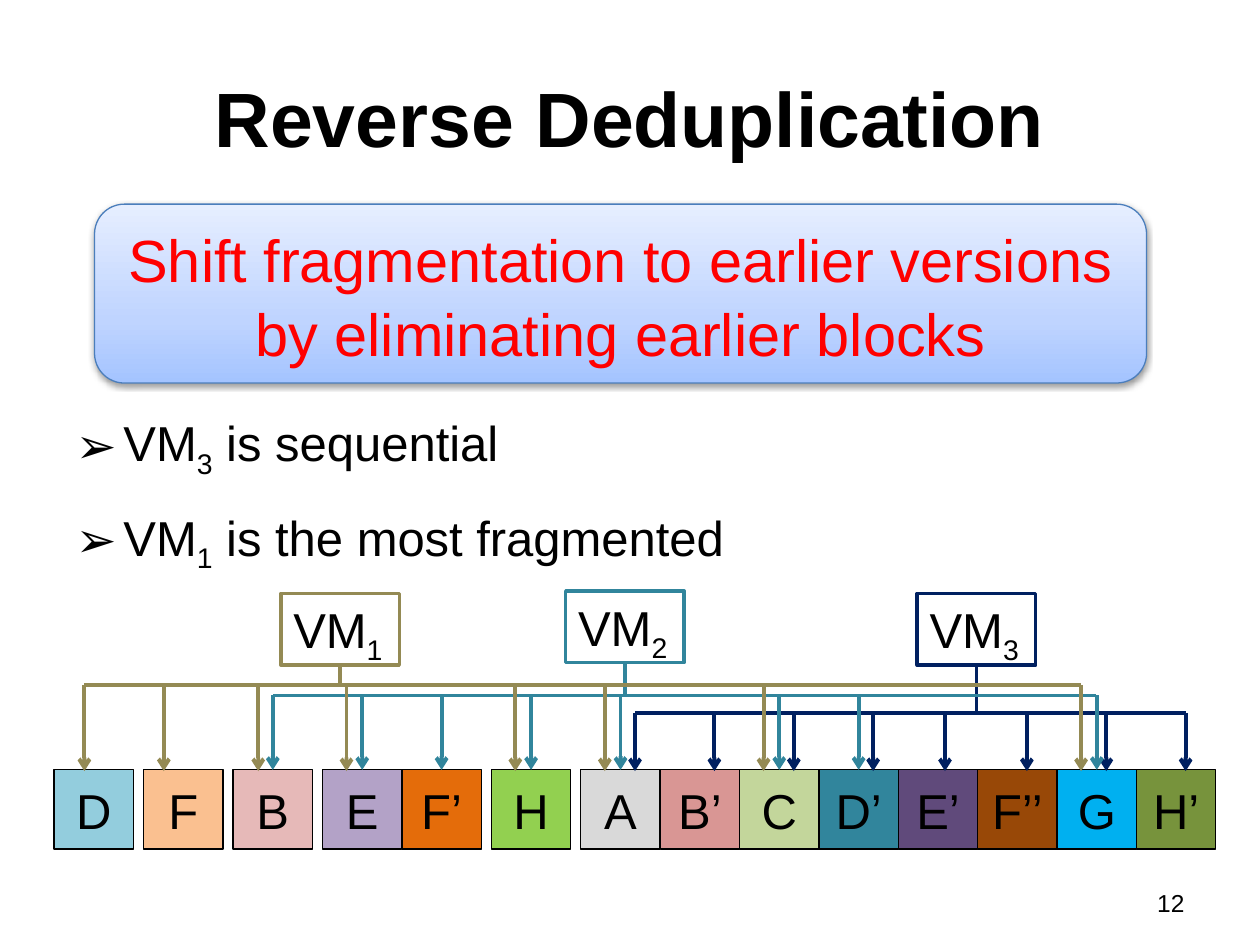
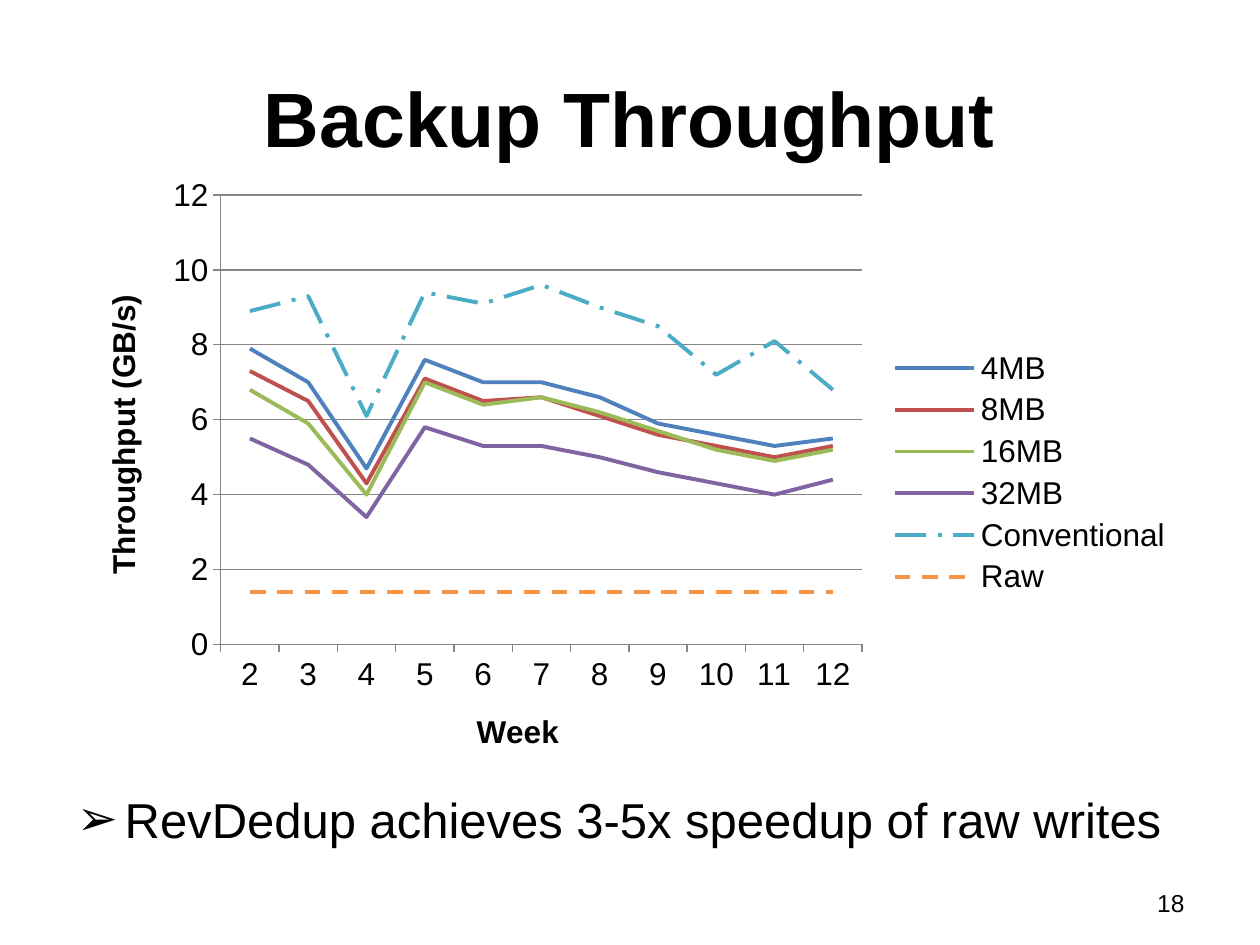
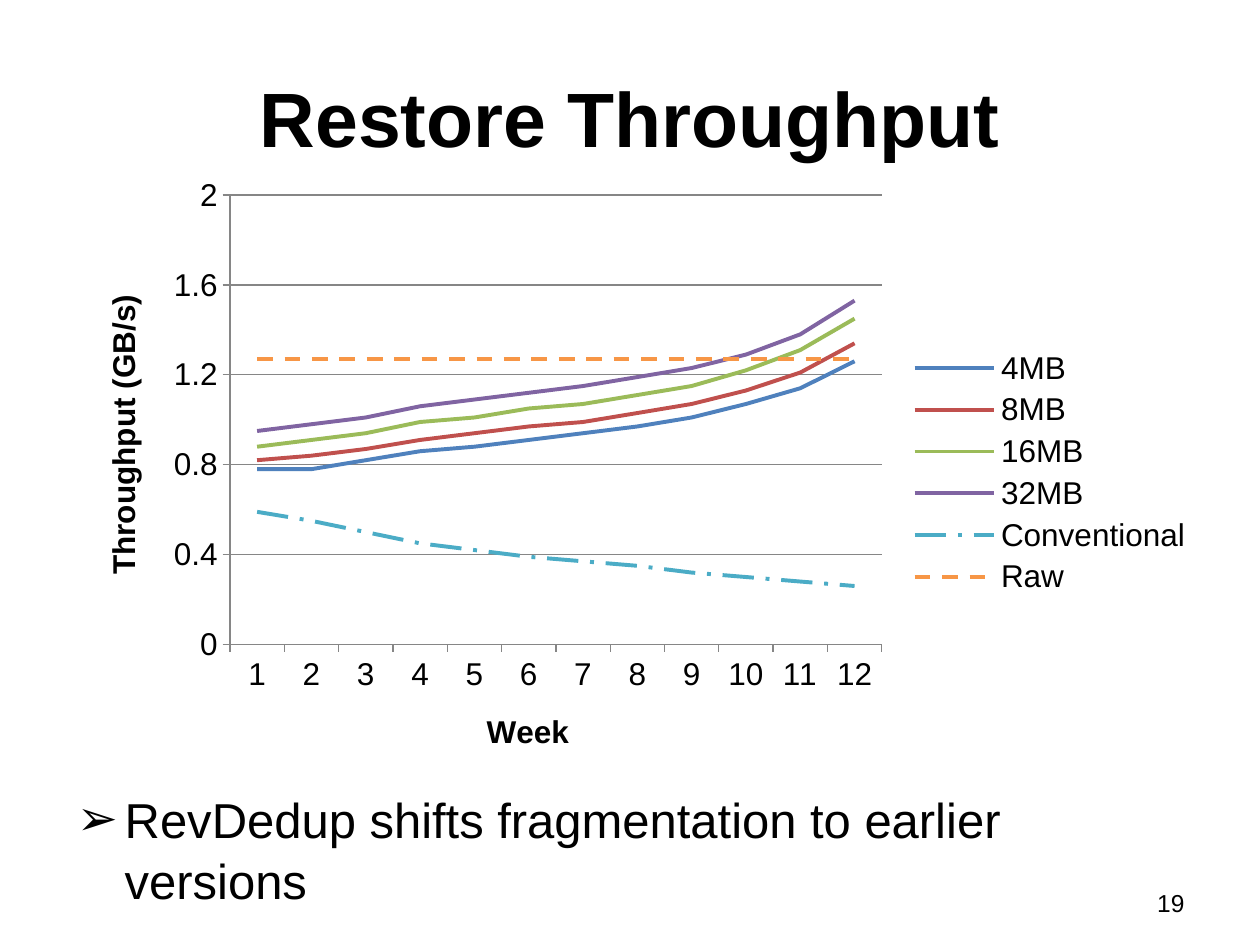
from copy import deepcopy
from dataclasses import dataclass

from lxml import etree
from pptx import Presentation, util as u
from pptx.chart.data import CategoryChartData
from pptx.dml.color import RGBColor
from pptx.enum import chart as ch, dml, shapes, text
from pptx.oxml.ns import qn

Inches, Pt = u.Inches, u.Pt
ALIGN, ANCHOR = text.PP_ALIGN, text.MSO_ANCHOR
SHAPE = shapes.MSO_SHAPE
DASH = dml.MSO_LINE


@dataclass(frozen=True)
class Theme:
    font: str = "Arial"
    ink: str = "000000"
    paper: str = "FFFFFF"
    alert: str = "FF0000"
    edge: str = "4B7EBC"
    axis: str = "868686"
    grad: tuple = ((0, "A4C4FF"), (0.35, "BFD4FF"), (1, "E6EEFF"))
    title: int = 44
    banner: int = 34
    body: int = 28
    chart: int = 18
    page: int = 14
    lead: float = 1.05


T = Theme()

# Block groups: (label, fill); blocks in one group touch
GROUPS = [
    [("D", "93CDDD")],
    [("F", "FAC090")],
    [("B", "E6B9B8")],
    [("E", "B3A2C7"), ("F’", "E46C0A")],
    [("H", "92D050")],
    [("A", "D9D9D9"), ("B’", "D99694"), ("C", "C3D69B"), ("D’", "31859C"),
     ("E’", "604A7B"), ("F’’", "984807"), ("G", "00B0F0"), ("H’", "77933C")],
]

# Machines: label, colour, box left and top, bar height, arrow positions
VMS = [
    ("VM_3", "002060", 7.28, 4.71, 5.66,
     [5.04, 5.67, 6.3, 6.93, 7.5, 8.15, 8.78, 9.41]),
    ("VM_2", "31859C", 4.49, 4.69, 5.52,
     [2.17, 2.88, 3.5, 4.23, 4.94, 6.18, 6.84, 8.7]),
    ("VM_1", "948A54", 2.23, 4.71, 5.44,
     [0.67, 1.3, 2.05, 2.75, 4.09, 4.8, 6.06, 8.58]),
]

# Series styles: name, colour, dash
LINES = [
    ("4MB", "4F81BD", None),
    ("8MB", "C0504D", None),
    ("16MB", "9BBB59", None),
    ("32MB", "8064A2", None),
    ("Conventional", "4BACC6", DASH.LONG_DASH_DOT),
    ("Raw", "F79646", DASH.DASH),
]

BACKUP = [
    [7.9, 7, 4.7, 7.6, 7, 7, 6.6, 5.9, 5.6, 5.3, 5.5],
    [7.3, 6.5, 4.3, 7.1, 6.5, 6.6, 6.1, 5.6, 5.3, 5, 5.3],
    [6.8, 5.9, 4, 7, 6.4, 6.6, 6.2, 5.7, 5.2, 4.9, 5.2],
    [5.5, 4.8, 3.4, 5.8, 5.3, 5.3, 5, 4.6, 4.3, 4, 4.4],
    [8.9, 9.3, 6.1, 9.4, 9.1, 9.6, 9, 8.5, 7.2, 8.1, 6.8],
    [1.4] * 11,
]
RESTORE = [
    [0.78, 0.78, 0.82, 0.86, 0.88, 0.91, 0.94, 0.97, 1.01, 1.07, 1.14, 1.26],
    [0.82, 0.84, 0.87, 0.91, 0.94, 0.97, 0.99, 1.03, 1.07, 1.13, 1.21, 1.34],
    [0.88, 0.91, 0.94, 0.99, 1.01, 1.05, 1.07, 1.11, 1.15, 1.22, 1.31, 1.45],
    [0.95, 0.98, 1.01, 1.06, 1.09, 1.12, 1.15, 1.19, 1.23, 1.29, 1.38, 1.53],
    [0.59, 0.55, 0.5, 0.45, 0.42, 0.39, 0.37, 0.35, 0.32, 0.3, 0.28, 0.26],
    [1.27] * 12,
]


# Helpers
def rgb(code):
    return RGBColor.from_string(code)


def style(font, size, color=T.ink, bold=False):
    font.name, font.size, font.bold = T.font, Pt(size), bold
    font.color.rgb = rgb(color)


def write(frame, *paras, size=T.body, color=T.ink, bold=False, wrap=True,
          align=ALIGN.LEFT, anchor=ANCHOR.TOP, lead=None, gap=None, bullet=None):
    """Fill a frame; an underscore lowers the character after it."""
    frame.auto_size = text.MSO_AUTO_SIZE.NONE
    frame.word_wrap, frame.vertical_anchor = wrap, anchor
    for i, line in enumerate(paras):
        para = frame.add_paragraph() if i else frame.paragraphs[0]
        para.alignment, para.line_spacing = align, lead
        if gap is not None:
            para.space_before = Pt(gap)
        if bullet:
            mark(para, bullet)
        head, *rest = line.split("_")
        parts = [(head, False)]
        for part in rest:
            parts += [(part[0], True), (part[1:], False)]
        for words, low in parts:
            if words:
                run = para.add_run()
                run.text = words
                style(run.font, size, color, bold)
                if low:
                    run._r.get_or_add_rPr().set("baseline", "-25000")


def mark(para, sign):
    props = para._p.get_or_add_pPr()
    props.set("marL", str(Inches(0.38)))
    props.set("indent", str(-Inches(0.38)))
    etree.SubElement(props, qn("a:buChar")).set("char", sign)


def place(shape, box):
    shape.left, shape.top, shape.width, shape.height = map(Inches, box)


def draw(slide, kind, box, fill, line, width):
    shape = slide.shapes.add_shape(kind, *map(Inches, box))
    shape.shadow.inherit = False
    if fill:
        shape.fill.solid()
        shape.fill.fore_color.rgb = rgb(fill)
    shape.line.color.rgb = rgb(line)
    shape.line.width = Pt(width)
    return shape


def link(slide, start, end, color, arrow=False):
    line = slide.shapes.add_connector(
        shapes.MSO_CONNECTOR.STRAIGHT, *map(Inches, (*start, *end)))
    line.line.color.rgb = rgb(color)
    line.line.width = Pt(2.25)
    if arrow:
        etree.SubElement(line.line._get_or_add_ln(),
                         qn("a:tailEnd")).set("type", "arrow")
    etree.SubElement(line._element.spPr, qn("a:effectLst"))
    return line


# Shared frame: title, bullet list, page number
def page(deck, title, points, box, number):
    slide = deck.slides.add_slide(deck.slide_layouts[1])
    head, body = slide.placeholders
    place(head, (0.5, 0.3, 9, 1.25))
    write(head.text_frame, title, size=T.title, bold=True,
          align=ALIGN.CENTER, anchor=ANCHOR.MIDDLE)
    place(body, box)
    write(body.text_frame, *points, lead=T.lead, gap=14, bullet="➢")
    foot = slide.shapes.add_textbox(*map(Inches, (7.17, 7, 2.33, 0.35)))
    write(foot.text_frame, str(number), size=T.page, align=ALIGN.RIGHT)
    return slide


# Gradient banner with soft shadow
def banner(slide, box, words):
    shape = draw(slide, SHAPE.ROUNDED_RECTANGLE, box, None, T.edge, 0.75)
    shape.fill.gradient()
    shape.fill.gradient_angle = 90
    first = shape._element.spPr.find(".//" + qn("a:gs"))
    first.addnext(deepcopy(first))
    for stop, (pos, color) in zip(shape.fill.gradient_stops, T.grad):
        stop.position, stop.color.rgb = pos, rgb(color)
    glow = etree.SubElement(shape._element.spPr.find(qn("a:effectLst")),
                            qn("a:outerShdw"), blurRad=str(Pt(3.1)),
                            dist=str(Pt(1.6)), dir="5400000", rotWithShape="0")
    tint = etree.SubElement(glow, qn("a:srgbClr"), val=T.ink)
    etree.SubElement(tint, qn("a:alpha"), val="38000")
    write(shape.text_frame, words, size=T.banner, color=T.alert,
          align=ALIGN.CENTER, lead=T.lead)


# Row of blocks; returns (centre, shape) pairs
def row(slide, left, top, side=0.63, gap=0.08):
    blocks = []
    for group in GROUPS:
        for label, fill in group:
            block = draw(slide, SHAPE.RECTANGLE, (left, top, side, side),
                         fill, T.ink, 0.75)
            write(block.text_frame, label, wrap=False,
                  align=ALIGN.CENTER, anchor=ANCHOR.MIDDLE)
            blocks.append((left + side / 2, block))
            left += side
        left += gap
    return blocks


# One machine: arrows, bar, box and stem
def tree(slide, blocks, label, color, left, top, bar, spots, floor=6.12):
    for x in spots:
        mid, block = min(blocks, key=lambda b: abs(b[0] - x))
        centred = abs(mid - x) < 0.04
        x = mid if centred else x
        arrow = link(slide, (x, bar), (x, floor), color, arrow=True)
        if centred:
            arrow.end_connect(block, 0)
    link(slide, (spots[0], bar), (spots[-1], bar), color)
    wide, high = 0.94, 0.57
    node = draw(slide, SHAPE.RECTANGLE, (left, top, wide, high),
                T.paper, color, 2)
    write(node.text_frame, label, wrap=False)
    mid = left + wide / 2
    link(slide, (mid, top + high), (mid, bar), color).begin_connect(node, 2)


# Line chart
def graph(slide, box, weeks, table, top=None, step=None):
    data = CategoryChartData()
    data.categories = [str(week) for week in weeks]
    for (name, _, _), vals in zip(LINES, table):
        data.add_series(name, vals)
    chart = slide.shapes.add_chart(
        ch.XL_CHART_TYPE.LINE, *map(Inches, box), data).chart
    chart.has_title = False
    style(chart.font, T.chart)
    chart.has_legend = True
    chart.legend.position = ch.XL_LEGEND_POSITION.RIGHT
    chart.legend.include_in_layout = False
    style(chart.legend.font, T.chart)

    cat, val = chart.category_axis, chart.value_axis
    val.has_major_gridlines = True
    if top:
        val.minimum_scale, val.maximum_scale, val.major_unit = 0, top, step
    for axis, words in ((cat, "Week"), (val, "Throughput (GB/s)")):
        axis.major_tick_mark = ch.XL_TICK_MARK.OUTSIDE
        axis.minor_tick_mark = ch.XL_TICK_MARK.NONE
        style(axis.tick_labels.font, T.chart)
        run = axis.axis_title.text_frame.paragraphs[0].add_run()
        run.text = words
        style(run.font, T.chart, bold=True)
    for rule in (cat.format, val.format, val.major_gridlines.format):
        rule.line.color.rgb = rgb(T.axis)
        rule.line.width = Pt(0.75)

    plot = chart.plots[0]
    plot.vary_by_categories = False
    for item, (_, color, dash) in zip(plot.series, LINES):
        item.smooth = False
        item.marker.style = ch.XL_MARKER_STYLE.NONE
        line = item.format.line
        line.color.rgb, line.width = rgb(color), Pt(2.25)
        if dash:
            line.dash_style = dash


# Slides
def main():
    deck = Presentation()
    deck.slide_width, deck.slide_height = Inches(10), Inches(7.5)

    slide = page(deck, "Reverse Deduplication",
                 ["VM_3 is sequential", "VM_1 is the most fragmented"],
                 (0.5, 3.2, 9, 1.02), 12)
    banner(slide, (0.75, 1.62, 8.35, 1.42),
           "Shift fragmentation to earlier versions by eliminating earlier blocks")
    blocks = row(slide, 0.43, 6.11)
    for machine in VMS:
        tree(slide, blocks, *machine)

    slide = page(deck, "Backup Throughput",
                 ["RevDedup achieves 3-5x speedup of raw writes"],
                 (0.51, 6.19, 9, 0.67), 18)
    graph(slide, (0.59, 1.31, 8.82, 4.88), range(2, 13), BACKUP)

    slide = page(deck, "Restore Throughput",
                 ["RevDedup shifts fragmentation to earlier versions"],
                 (0.51, 6.19, 9, 0.74), 19)
    graph(slide, (0.59, 1.31, 8.98, 4.88), range(1, 13), RESTORE, 2, 0.4)

    deck.save("out.pptx")


if __name__ == "__main__":
    main()
